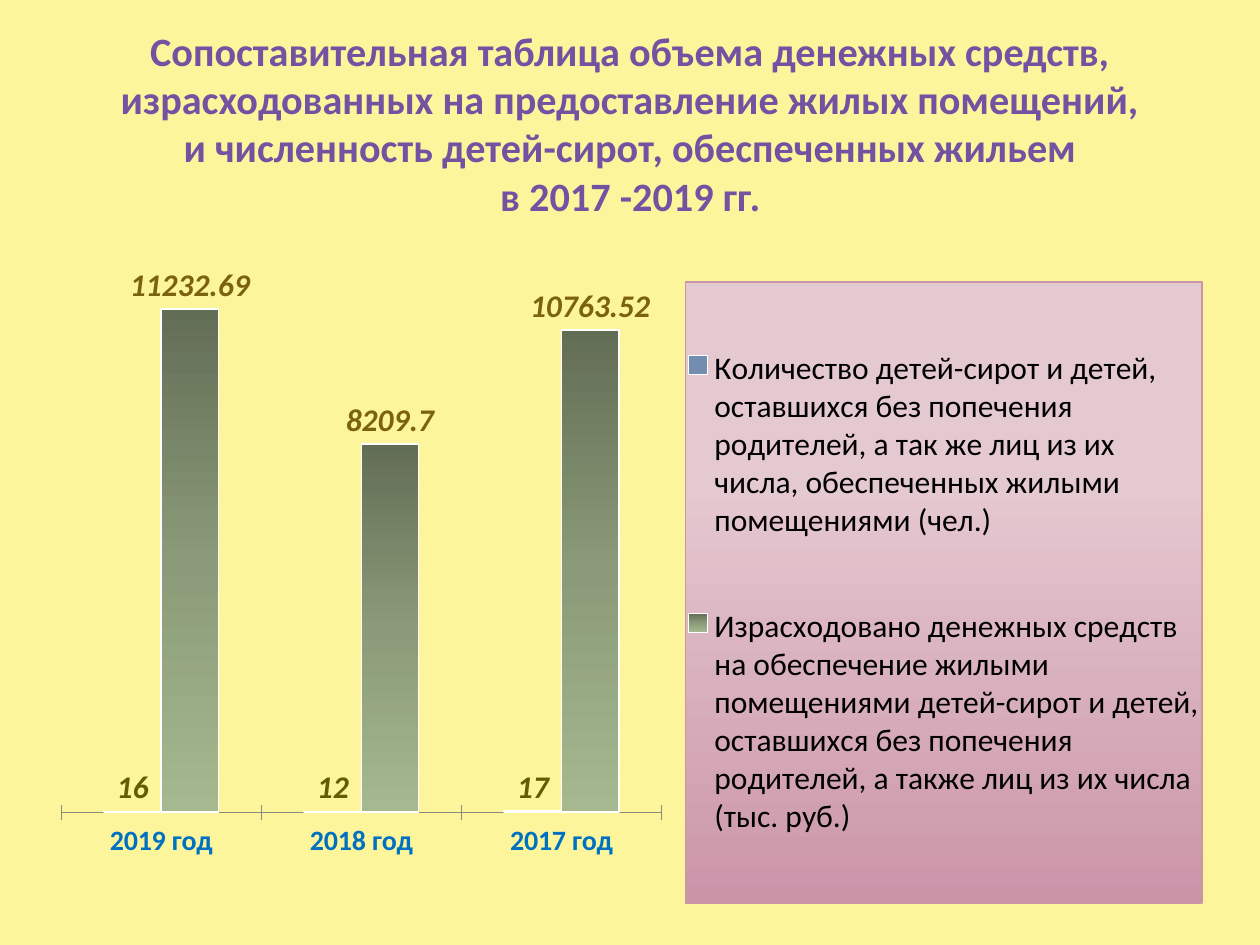
"""Build a slide comparing housing spending with the number of orphans housed."""
from copy import deepcopy
from lxml import etree
from pptx import Presentation
from pptx import util as u
from pptx.chart.data import CategoryChartData
from pptx.dml.color import RGBColor
from pptx.enum import chart as ch, text
from pptx.oxml import parse_xml
from pptx.oxml.ns import nsdecls

TITLE = (
    "Сопоставительная таблица объема денежных средств, "
    "израсходованных на предоставление жилых помещений,\v"
    "и численность детей-сирот, обеспеченных жильем\v"
    "в 2017 -2019 гг."
)
YEARS = ["2019 год", "2018 год", "2017 год"]
SERIES = [
    ("Количество детей-сирот и детей, оставшихся без попечения родителей, "
     "а так же лиц из их числа, обеспеченных жилыми помещениями (чел.)",
     (16, 12, 17)),
    ("Израсходовано денежных средств на обеспечение жилыми помещениями "
     "детей-сирот и детей, оставшихся без попечения родителей, "
     "а также лиц из их числа (тыс. руб.)",
     (11232.69, 8209.7, 10763.52)),
]
THEME = {
    "back": "FDF59C",
    "line": "FFFFFF",
    "axis": "8C8C7A",
    "title": {"name": "Calibri", "size": 23, "bold": True, "color": "7153A1"},
    "base": {"name": "Calibri", "size": 18, "color": "000000"},
    "years": {"name": "Calibri", "size": 16, "bold": True, "color": "0070C0"},
    "label": {"name": "Calibri", "size": 18, "bold": True, "italic": True},
    "tints": ("645C02", "7A620E"),
    "bars": ([(0, "738DB0"), (100, "738DB0")],
             [(0, "626D55"), (50, "8B9B79"), (100, "A5B88F")]),
    "legend": [(0, "E5C9D1"), (35, "E4C6CF"), (100, "CB95A8")],
    "edge": "CB95A8",
}
HEAD = (0.28, 0.29, 9.45, 1.5)
CHART = (0.2, 2.11, 9.53, 6.02)
PLOT = (0.03, 0.01, 0.5, 0.71)
KEY = (0.55, 0.02, 0.43, 0.82)


def rgb(code):
    return RGBColor.from_string(code)


def style(font, form):
    for key, val in form.items():
        if key == "color":
            font.color.rgb = rgb(val)
        else:
            setattr(font, key, u.Pt(val) if key == "size" else val)


def blend(stops):
    marks = "".join(
        f'<a:gs pos="{pos * 1000}"><a:srgbClr val="{code}"/></a:gs>'
        for pos, code in stops)
    return (f'<a:gradFill {nsdecls("a")} rotWithShape="1"><a:gsLst>{marks}</a:gsLst>'
            '<a:lin ang="5400000" scaled="0"/></a:gradFill>')


def place(area, inner=False):
    rows = '<c:layoutTarget val="inner"/>' if inner else ""
    rows += '<c:xMode val="edge"/><c:yMode val="edge"/>'
    rows += "".join(f'<c:{key} val="{val}"/>' for key, val in zip("xywh", area))
    return parse_xml(f'<c:layout {nsdecls("c")}><c:manualLayout>{rows}'
                     '</c:manualLayout></c:layout>')


def swap(host, node, spot):
    for old in host.findall(node.tag):
        host.remove(old)
    host.insert(spot, node)


def add_title(slide):
    head = slide.shapes.title
    head.left, head.top, head.width, head.height = map(u.Inches, HEAD)
    frame = head.text_frame
    frame.vertical_anchor = text.MSO_ANCHOR.BOTTOM
    frame.auto_size = text.MSO_AUTO_SIZE.NONE
    para = frame.paragraphs[0]
    para.text = TITLE
    para.alignment = text.PP_ALIGN.CENTER
    for run in para.runs:
        style(run.font, THEME["title"])
    look = para.runs[0].font._element
    for gap in para._p.findall(look.tag.replace("rPr", "br")):
        gap.append(deepcopy(look))


def add_legend(chart):
    chart.has_legend = True
    key = chart.legend
    key.position = ch.XL_LEGEND_POSITION.RIGHT
    key.include_in_layout = False
    style(key.font, THEME["base"])
    node = key._element
    swap(node, place(KEY), 1)
    skin = parse_xml(
        f'<c:spPr {nsdecls("c", "a")}>{blend(THEME["legend"])}<a:ln w="9525">'
        f'<a:solidFill><a:srgbClr val="{THEME["edge"]}"/></a:solidFill></a:ln></c:spPr>')
    node.insert(len(node) - 1, skin)


def add_axes(chart):
    years, sums = chart.category_axis, chart.value_axis
    style(years.tick_labels.font, THEME["years"])
    years.major_tick_mark = ch.XL_TICK_MARK.CROSS
    years.format.line.color.rgb = rgb(THEME["axis"])
    sums.visible = sums.has_major_gridlines = False
    sums.minimum_scale, sums.maximum_scale = 0, 12000


def add_chart(slide):
    data = CategoryChartData()
    data.categories = YEARS
    for name, vals in SERIES:
        data.add_series(name, vals)
    chart = slide.shapes.add_chart(
        ch.XL_CHART_TYPE.COLUMN_CLUSTERED, *map(u.Inches, CHART), data).chart
    chart.has_title = False
    style(chart.font, THEME["base"])
    plot = chart.plots[0]
    plot.gap_width, plot.overlap, plot.vary_by_categories = 150, 0, False
    for bar, stops, tint in zip(plot.series, THEME["bars"], THEME["tints"]):
        bar.format.line.color.rgb = rgb(THEME["line"])
        bar.format.line.width = u.Pt(1)
        bar._element.get_or_add_spPr().insert(0, etree.fromstring(blend(stops)))
        tags = bar.data_labels
        tags.show_value = True
        tags.position = ch.XL_LABEL_POSITION.OUTSIDE_END
        style(tags.font, {**THEME["label"], "color": tint})
    add_axes(chart)
    add_legend(chart)
    swap(chart._chartSpace.chart.plotArea, place(PLOT, True), 0)


def main():
    deck = Presentation()
    deck.slide_width, deck.slide_height = u.Inches(10), u.Inches(7.5)
    slide = deck.slides.add_slide(deck.slide_layouts[5])
    slide.background.fill.solid()
    slide.background.fill.fore_color.rgb = rgb(THEME["back"])
    add_title(slide)
    add_chart(slide)
    deck.save("out.pptx")


if __name__ == "__main__":
    main()
